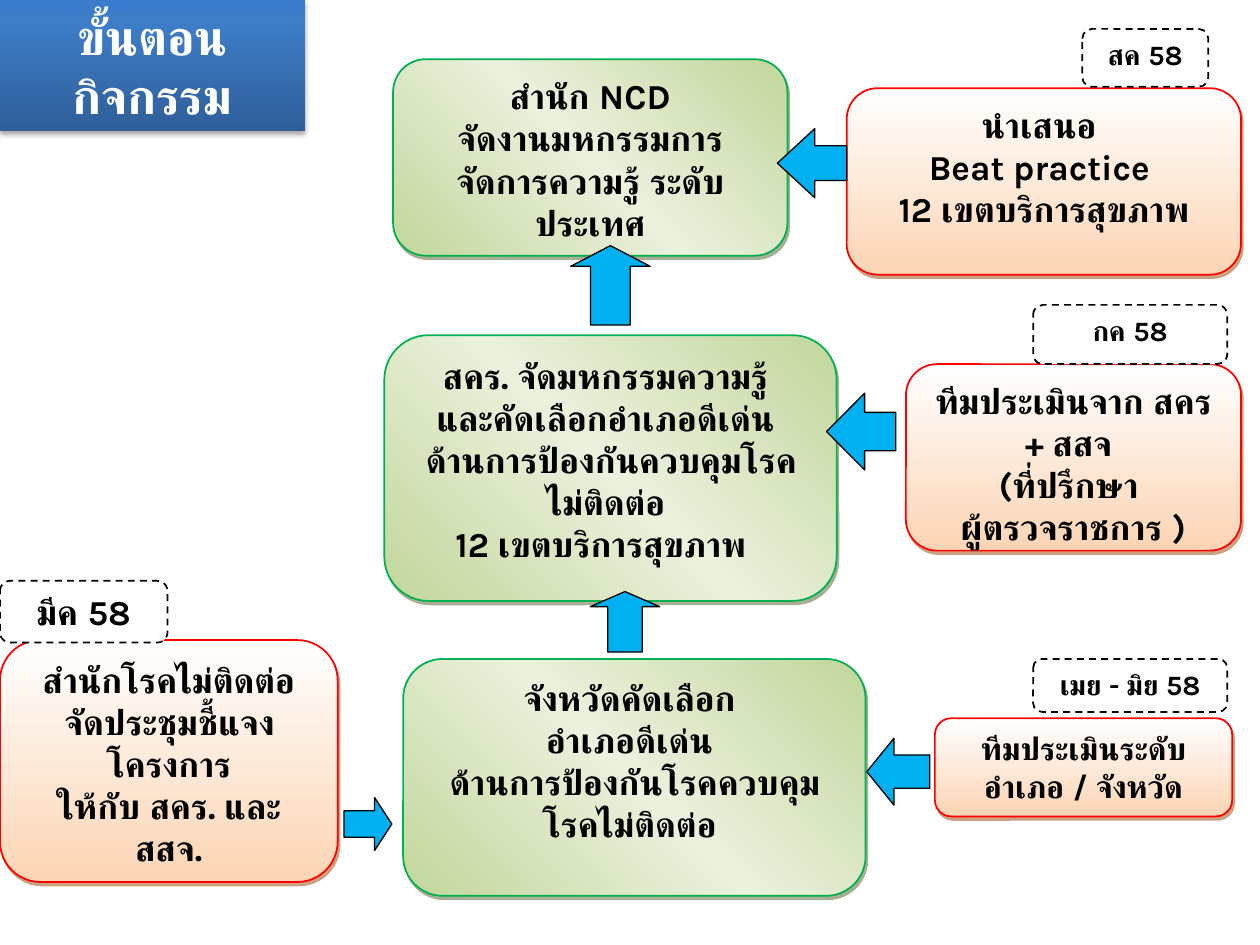
from lxml.etree import SubElement
from pptx import Presentation
from pptx.dml.color import RGBColor
from pptx.enum.dml import MSO_LINE
from pptx.enum.shapes import MSO_SHAPE
from pptx.enum.text import MSO_ANCHOR, PP_ALIGN
from pptx.oxml.ns import qn
from pptx.util import Inches, Pt

COLORS = {
    "black": "000000", "white": "FFFFFF", "arrow": "00B0F0",
    "green line": "00B050", "red line": "FF0000",
}
# Gradient stops, gradient angle, and shadow: colour, opacity, blur, distance, angle
STYLES = {
    "green": ([(0, "C2D69B"), (50, "EAF1DD"), (100, "C2D69B")], 315,
              ("4E6128", 50, 0, 2.2, 63)),
    "red": ([(0, "FFFFFF"), (100, "FBD4B4")], 90,
            ("974706", 50, 0, 2.2, 63)),
    "title": ([(0, "2F5F99"), (80, "3D7CC7"), (100, "3A7CCB")], 270,
              ("000000", 35, 3.1, 1.8, 90)),
}

presentation = Presentation()
presentation.slide_width = Inches(10)
presentation.slide_height = Inches(7.5)
slide = presentation.slides.add_slide(presentation.slide_layouts[6])


def add_shape(kind, box, line=None, width=1, text="", size=20, color="black"):
    """Add a shape with its outline and centred bold text."""
    shape = slide.shapes.add_shape(kind, *(Inches(value) for value in box))
    shape.shadow.inherit = False
    if line:
        shape.line.color.rgb = RGBColor.from_string(COLORS[line])
        shape.line.width = Pt(width)
    else:
        shape.line.fill.background()
    if text:
        text_frame = shape.text_frame
        text_frame.text = text
        text_frame.word_wrap = True
        text_frame.vertical_anchor = MSO_ANCHOR.TOP
        for paragraph in text_frame.paragraphs:
            paragraph.alignment = PP_ALIGN.CENTER
            for run in paragraph.runs:
                run.font.name = "Karla"
                run.font.size = Pt(size)
                run.font.bold = True
                run.font.color.rgb = RGBColor.from_string(COLORS[color])
    return shape


def apply_style(shape, name):
    """Give a shape its gradient fill and outer shadow."""
    stops, angle, (color, opacity, blur, distance, direction) = STYLES[name]
    shape.fill.gradient()
    properties = shape._element.spPr
    gradient = properties.find(qn("a:gradFill"))
    stop_list = gradient.find(qn("a:gsLst"))
    for old_stop in list(stop_list):
        stop_list.remove(old_stop)
    for position, stop_color in stops:
        stop = SubElement(stop_list, qn("a:gs"), pos=str(position * 1000))
        SubElement(stop, qn("a:srgbClr"), val=stop_color)
    linear = gradient.find(qn("a:lin"))
    linear.set("ang", str(angle * 60000))
    linear.set("scaled", "0")

    shadow = SubElement(
        properties.find(qn("a:effectLst")), qn("a:outerShdw"),
        blurRad=str(Pt(blur)), dist=str(Pt(distance)),
        dir=str(direction * 60000), algn="ctr", rotWithShape="0")
    shadow_color = SubElement(shadow, qn("a:srgbClr"), val=color)
    SubElement(shadow_color, qn("a:alpha"), val=str(opacity * 1000))


# Steps (green) and contributors (red); \v is a line break inside a paragraph
boxes = [
    ("green", (3.12, 0.47, 3.13, 1.56), 20,
     "สำนัก NCD\nจัดงานมหกรรมการจัดการความรู้ ระดับประเทศ"),
    ("green", (3.05, 2.66, 3.59, 2.11), 20,
     "สคร. จัดมหกรรมความรู้ \nและคัดเลือกอำเภอดีเด่น \v"
     "ด้านการป้องกันควบคุมโรคไม่ติดต่อ \n12 เขตบริการสุขภาพ  "),
    ("green", (3.2, 5.23, 3.67, 1.88), 20,
     "จังหวัดคัดเลือก \nอำเภอดีเด่น \v"
     "ด้านการป้องกันโรคควบคุมโรคไม่ติดต่อ "),
    ("red", (6.72, 0.7, 3.13, 1.48), 20,
     "นำเสนอ \nBeat practice \n12 เขตบริการสุขภาพ"),
    ("red", (7.19, 2.89, 2.66, 1.48), 20,
     "ทีมประเมินจาก สคร + สสจ \n(ที่ปรึกษา \nผู้ตรวจราชการ )"),
    ("red", (7.42, 5.7, 2.36, 0.78), 18,
     "ทีมประเมินระดับอำเภอ / จังหวัด"),
    ("red", (0, 5.08, 2.68, 1.92), 20,
     "สำนักโรคไม่ติดต่อ\nจัดประชุมชี้แจงโครงการ\nให้กับ สคร. และ สสจ."),
]
for style, box, size, text in boxes:
    shape = add_shape(MSO_SHAPE.ROUNDED_RECTANGLE, box, f"{style} line",
                      text=text, size=size)
    apply_style(shape, style)

# Arrows between the boxes: kind, box, rotation, head length
arrows = [
    (MSO_SHAPE.RIGHT_ARROW, (2.73, 6.33, 0.38, 0.42), 0, 0.36),
    (MSO_SHAPE.LEFT_ARROW, (4.72, 4.66, 0.48, 0.55), 90, 0.25),
    (MSO_SHAPE.UP_ARROW, (6.53, 3.15, 0.61, 0.55), 270, 0.55),
    (MSO_SHAPE.UP_ARROW, (4.53, 1.95, 0.63, 0.63), 0, 0.26),
    (MSO_SHAPE.LEFT_ARROW, (6.17, 1.02, 0.55, 0.55), 0, 0.54),
    (MSO_SHAPE.LEFT_ARROW, (6.88, 5.86, 0.5, 0.53), 0, 0.43),
]
for kind, box, rotation, head in arrows:
    arrow = add_shape(kind, box, "black", 0.75)
    arrow.fill.solid()
    arrow.fill.fore_color.rgb = RGBColor.from_string(COLORS["arrow"])
    arrow.rotation = rotation
    arrow.adjustments[0] = 0.5
    arrow.adjustments[1] = head

# Dashed month tags
tags = [
    ((8.2, 5.23, 1.54, 0.42), 16, "เมย - มิย 58"),
    ((8.2, 2.42, 1.54, 0.47), 16, "กค 58"),
    ((8.59, 0.23, 1, 0.46), 16, "สค 58"),
    ((0, 4.61, 1.33, 0.49), 20, "มีค 58"),
]
for box, size, text in tags:
    tag = add_shape(MSO_SHAPE.ROUNDED_RECTANGLE, box, "black",
                    text=text, size=size)
    tag.fill.solid()
    tag.fill.fore_color.rgb = RGBColor.from_string(COLORS["white"])
    tag.line.dash_style = MSO_LINE.DASH

# Title
title = add_shape(MSO_SHAPE.RECTANGLE, (0, 0, 2.42, 1.04),
                  text="ขั้นตอนกิจกรรม", size=28, color="white")
title.text_frame.vertical_anchor = MSO_ANCHOR.MIDDLE
apply_style(title, "title")

presentation.save("out.pptx")
